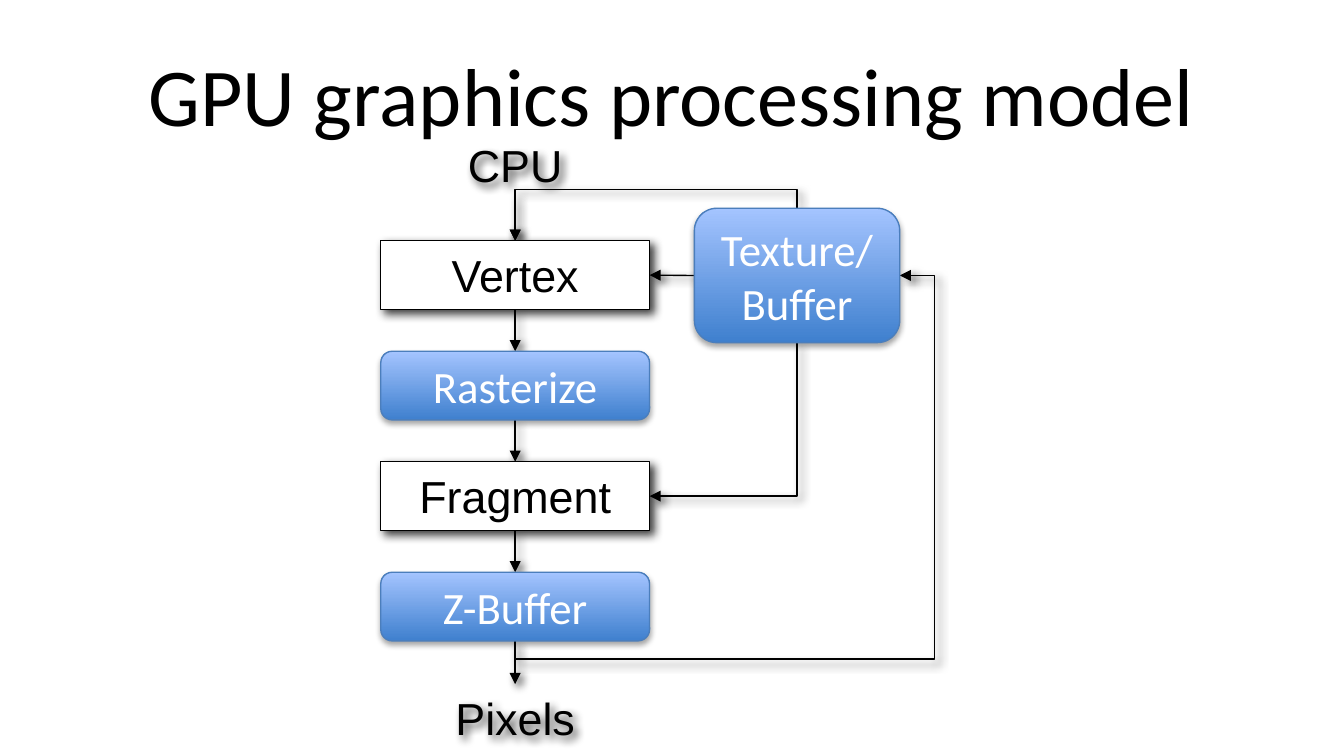
import pptx
import pptx.util
import pptx.dml.color
import pptx.enum.shapes
import pptx.enum.text
import pptx.oxml
import pptx.oxml.ns

Pt = pptx.util.Pt
RGBColor = pptx.dml.color.RGBColor
SHAPE = pptx.enum.shapes.MSO_SHAPE
CONNECTOR = pptx.enum.shapes.MSO_CONNECTOR
ANCHOR = pptx.enum.text.MSO_ANCHOR
qn = pptx.oxml.ns.qn

BLACK = RGBColor(0x00, 0x00, 0x00)
WHITE = RGBColor(0xFF, 0xFF, 0xFF)
BLUE_DARK = RGBColor(0x3F, 0x80, 0xCE)
BLUE_LIGHT = RGBColor(0xA4, 0xC4, 0xFF)
BLUE_LINE = RGBColor(0x4B, 0x7E, 0xBC)

# Content: label and whether the stage is fixed hardware (blue, rounded)
TITLE = "GPU graphics processing model"
STAGES = [("Vertex", False), ("Rasterize", True), ("Fragment", False), ("Z-Buffer", True)]
SOURCE, RESULT = "CPU", "Pixels"
MEMORY = "Texture/Buffer"

# Layout, in points
COLUMN_LEFT, COLUMN_WIDTH = 204, 144
STAGE_TOP, STAGE_HEIGHT, STAGE_PITCH = 129, 36.8, 59.2
SOURCE_TOP, RESULT_TOP, LABEL_HEIGHT = 70.5, 366.5, 36
MEMORY_BOX = (372, 111.6, 110, 72)
TITLE_BOX = (36, 16.5, 648, 67.5)

# Shadows: opacity %, blur, distance, direction in degrees
STRONG_SHADOW = (75, 5, 3, 45)
SOFT_SHADOW = (35, 3.1, 1.8, 90)

FORMATS = {
    "title": {"size": Pt(44), "name": "Calibri", "color": BLACK},
    "plain": {"size": Pt(24), "name": "Arial", "color": BLACK},
    "blue": {"size": Pt(24), "name": "Calibri", "color": WHITE},
}

presentation = pptx.Presentation()
presentation.slide_width, presentation.slide_height = Pt(720), Pt(405)
slide = presentation.slides.add_slide(presentation.slide_layouts[6])


def add_shadow(properties, opacity, blur, distance, direction):
    """Put an outer shadow in the shape's effect list."""
    effects = properties.find(qn("a:effectLst"))
    if effects is None:
        effects = properties.makeelement(qn("a:effectLst"), {})
        properties.append(effects)
    effects.append(pptx.oxml.parse_xml(
        f'<a:outerShdw {pptx.oxml.ns.nsdecls("a")} blurRad="{Pt(blur)}" '
        f'dist="{Pt(distance)}" dir="{direction * 60000}" rotWithShape="0">'
        f'<a:srgbClr val="000000"><a:alpha val="{opacity * 1000}"/></a:srgbClr>'
        "</a:outerShdw>"))


def write(shape, text, style, anchor):
    frame = shape.text_frame
    frame.word_wrap = True
    frame.vertical_anchor = anchor
    paragraph = frame.paragraphs[0]
    paragraph.alignment = pptx.enum.text.PP_ALIGN.CENTER
    run = paragraph.add_run()
    run.text = text
    for key, value in FORMATS[style].items():
        if key == "color":
            run.font.color.rgb = value
        else:
            setattr(run.font, key, value)


def add_box(text, box, blue):
    kind = SHAPE.ROUNDED_RECTANGLE if blue else SHAPE.RECTANGLE
    shape = slide.shapes.add_shape(kind, *map(Pt, box))
    if blue:
        shape.fill.gradient()
        shape.fill.gradient_angle = 90
        for stop, color, position in zip(
                shape.fill.gradient_stops, (BLUE_DARK, BLUE_LIGHT), (0, 1)):
            stop.color.rgb, stop.position = color, position
    else:
        shape.fill.solid()
        shape.fill.fore_color.rgb = WHITE
    shape.line.color.rgb = BLUE_LINE if blue else BLACK
    shape.line.width = Pt(0.75)
    shape.shadow.inherit = False
    add_shadow(shape._element.spPr, *(SOFT_SHADOW if blue else STRONG_SHADOW))
    write(shape, text, "blue" if blue else "plain", ANCHOR.MIDDLE if blue else ANCHOR.TOP)


def add_label(text, top):
    label = slide.shapes.add_textbox(*map(Pt, (COLUMN_LEFT, top, COLUMN_WIDTH, LABEL_HEIGHT)))
    write(label, text, "plain", ANCHOR.TOP)
    add_shadow(label._element.spPr, *STRONG_SHADOW)


def add_arrow(begin, end, kind=CONNECTOR.STRAIGHT):
    connector = slide.shapes.add_connector(kind, *map(Pt, (*begin, *end)))
    connector.line.color.rgb = BLACK
    connector.line.width = Pt(0.75)
    line = connector.line._get_or_add_ln()
    line.append(line.makeelement(qn("a:tailEnd"), {"type": "triangle"}))
    add_shadow(connector._element.spPr, *STRONG_SHADOW)
    return connector


def add_elbow(begin, end, preset, rotation, flipped, adjustments=()):
    """Add a quarter-turned elbow: its unrotated frame swaps width and height."""
    connector = add_arrow(begin, end, CONNECTOR.ELBOW)
    width, height = abs(end[1] - begin[1]), abs(end[0] - begin[0])
    connector.left = Pt((begin[0] + end[0] - width) / 2)
    connector.top = Pt((begin[1] + end[1] - height) / 2)
    connector.width, connector.height = Pt(width), Pt(height)
    properties = connector._element.spPr
    frame = properties.find(qn("a:xfrm"))
    frame.set("rot", str(rotation * 60000))
    for flip in ("flipH", "flipV"):
        frame.set(flip, "1" if flipped else "0")
    geometry = properties.find(qn("a:prstGeom"))
    geometry.set("prst", preset)
    guides = geometry.find(qn("a:avLst"))
    for number, value in enumerate(adjustments, 1):
        guides.append(guides.makeelement(
            qn("a:gd"), {"name": f"adj{number}", "fmla": f"val {round(value * 100000)}"}))


# Positions
stage_tops = [STAGE_TOP + STAGE_PITCH * index for index in range(len(STAGES))]
stage_bottoms = [top + STAGE_HEIGHT for top in stage_tops]
column_center = COLUMN_LEFT + COLUMN_WIDTH / 2
column_right = COLUMN_LEFT + COLUMN_WIDTH
memory_left, memory_top, memory_width, memory_height = MEMORY_BOX
memory_center = memory_left + memory_width / 2
memory_middle = memory_top + memory_height / 2
vertex_middle, fragment_middle = (stage_tops[i] + STAGE_HEIGHT / 2 for i in (0, 2))

# Title
title = slide.shapes.add_textbox(*map(Pt, TITLE_BOX))
write(title, TITLE, "title", ANCHOR.MIDDLE)

# Arrows down the pipeline
arrow_starts = [SOURCE_TOP + LABEL_HEIGHT] + stage_bottoms
for start, stop in zip(arrow_starts, stage_tops + [RESULT_TOP]):
    add_arrow((column_center, start), (column_center, stop))

# Arrows to and from memory
add_arrow((memory_left, memory_middle), (column_right, vertex_middle))
add_elbow((memory_center, memory_top + memory_height), (column_right, fragment_middle),
          "bentConnector2", 90, False)
add_elbow((column_center, stage_bottoms[-1]), (memory_left + memory_width, memory_middle),
          "bentConnector4", 90, True, (-0.05, 1.09))
add_elbow((memory_center, memory_top), (column_center, stage_tops[0]),
          "bentConnector3", 270, True, (-0.57,))

# Stages, memory and end labels
for (text, blue), top in zip(STAGES, stage_tops):
    add_box(text, (COLUMN_LEFT, top, COLUMN_WIDTH, STAGE_HEIGHT), blue)
add_box(MEMORY, MEMORY_BOX, True)
add_label(SOURCE, SOURCE_TOP)
add_label(RESULT, RESULT_TOP)

presentation.save("out.pptx")
